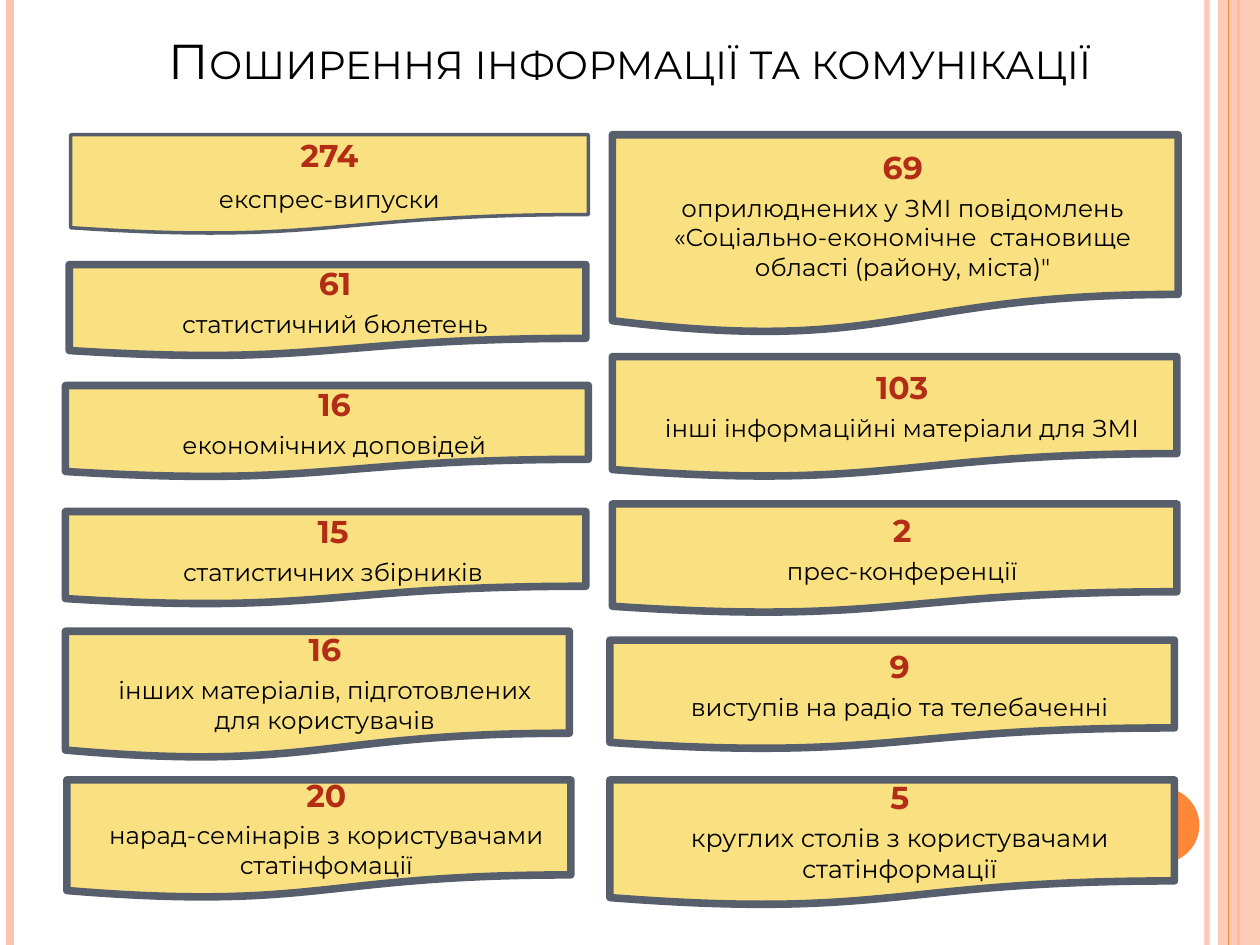
from dataclasses import dataclass

from lxml import etree
from pptx import Presentation
from pptx.dml.color import RGBColor
from pptx.enum.shapes import MSO_CONNECTOR as Connector, MSO_SHAPE as Shape
from pptx.enum.text import MSO_ANCHOR as Anchor, MSO_AUTO_SIZE as AutoSize, PP_ALIGN as Align
from pptx.oxml.ns import qn
from pptx.util import Pt

COLORS = {
    "peach": "FEC3AE",
    "orange": "FE8637",
    "yellow": "F9E181",
    "slate": "575F6D",
    "red": "B32C16",
    "black": "000000",
}
WIDTH, HEIGHT = 720, 540


@dataclass
class Card:
    place: tuple
    number: str
    label: str
    border: float = 4.33
    gap: float = 4
    indent: float = 8.64
    sizes: tuple = (18, 14)


@dataclass
class Builder:
    page: object
    font: str = "Montserrat"

    def paint(self, color_format, color, alpha=100):
        color_format.rgb = RGBColor.from_string(COLORS[color])
        return alpha

    def fade(self, element, alpha):
        for color in element.iter(qn("a:srgbClr")):
            etree.SubElement(color, qn("a:alpha")).set("val", str(alpha * 1000))

    def add_span(self, para, text, size, color, bold=False):
        span = para.add_run()
        span.text = text
        span.font.name = self.font
        span.font.size = Pt(size)
        span.font.bold = bold
        self.paint(span.font.color, color)
        return span

    def title(self, text, left, top, width, height):
        box = self.page.shapes.title
        box.left, box.top, box.width, box.height = map(Pt, (left, top, width, height))
        frame = box.text_frame
        frame.auto_size = AutoSize.NONE
        frame.vertical_anchor = Anchor.BOTTOM
        para = frame.paragraphs[0]
        para.alignment = Align.CENTER
        span = self.add_span(para, text, 28, "black")
        span._r.get_or_add_rPr().set("cap", "small")

    def stripe(self, x, color, weight, alpha=100):
        line = self.page.shapes.add_connector(
            Connector.STRAIGHT, Pt(x), Pt(0), Pt(x), Pt(HEIGHT))
        line.line.width = Pt(weight)
        self.paint(line.line.color, color)
        properties = line._element.spPr
        etree.SubElement(properties, qn("a:effectLst"))
        if alpha < 100:
            self.fade(properties, alpha)

    def shape(self, kind, place, fill, alpha=100):
        box = self.page.shapes.add_shape(kind, *map(Pt, place))
        box.shadow.inherit = False
        box.fill.solid()
        self.paint(box.fill.fore_color, fill)
        box.line.fill.background()
        if alpha < 100:
            self.fade(box._element.spPr, alpha)
        return box

    def card(self, card):
        box = self.shape(Shape.FLOWCHART_DOCUMENT, card.place, "yellow")
        self.paint(box.line.color, "slate")
        box.line.width = Pt(card.border)
        frame = box.text_frame
        frame.word_wrap = True
        frame.vertical_anchor = Anchor.MIDDLE
        number, label = frame.paragraphs[0], frame.add_paragraph()
        for para in (number, label):
            para.alignment = Align.CENTER
            para.space_before = Pt(card.gap)
            para._p.get_or_add_pPr().set("marL", str(Pt(card.indent)))
        self.add_span(number, card.number, card.sizes[0], "red", bold=True)
        self.add_span(label, card.label, card.sizes[1], "black")


CARDS = [
    # Left column: publications
    Card((40.3, 77, 295.9, 56.9), "274", "експрес-випуски", border=2, gap=6, indent=0),
    Card((39.6, 151.2, 295.2, 52.6), "61", "статистичний бюлетень"),
    Card((37.4, 220.3, 298.8, 52.6), "16", "економічних доповідей"),
    Card((37.4, 292.3, 297.4, 53.3), "15", "статистичних збірників"),
    Card((37.4, 360.7, 288, 72.7), "16",
         "інших матеріалів, підготовлених для користувачів"),
    Card((38.2, 445.7, 288, 67.7), "20",
         "нарад-семінарів з користувачами статінфомації"),
    # Right column: media and events
    Card((349.9, 77, 323.3, 113.8), "69",
         "оприлюднених у ЗМІ повідомлень «Соціально-економічне  становище "
         "області (району, міста)\""),
    Card((349.9, 203.8, 322.6, 69.1), "103", "інші інформаційні матеріали для ЗМІ"),
    Card((349.9, 288, 322.6, 62.6), "2", "прес-конференції"),
    Card((348.5, 365.8, 322.6, 62.6), "9", "виступів на радіо та телебаченні"),
    Card((348.5, 445.7, 322.6, 72), "5",
         "круглих столів з користувачами статінформації", sizes=(18.1, 14.4)),
]


def main():
    deck = Presentation()
    deck.slide_width, deck.slide_height = Pt(WIDTH), Pt(HEIGHT)
    builder = Builder(deck.slides.add_slide(deck.slide_layouts[5]))

    # Side stripes and circle
    builder.stripe(689.8, "peach", 3, alpha=93)
    builder.stripe(5.8, "peach", 4.5)
    builder.stripe(707.8, "orange", 1.5)
    builder.shape(Shape.RECTANGLE, (696, 0, 24, HEIGHT), "peach", alpha=87)
    builder.stripe(702, "orange", 0.75)
    builder.shape(Shape.OVAL, (642.2, 450, 43.2, 43.2), "orange")

    # Title and cards
    builder.title("Поширення інформації та комунікації", 36, 9.4, 648, 45.4)
    for card in CARDS:
        builder.card(card)

    deck.save("out.pptx")


if __name__ == "__main__":
    main()
